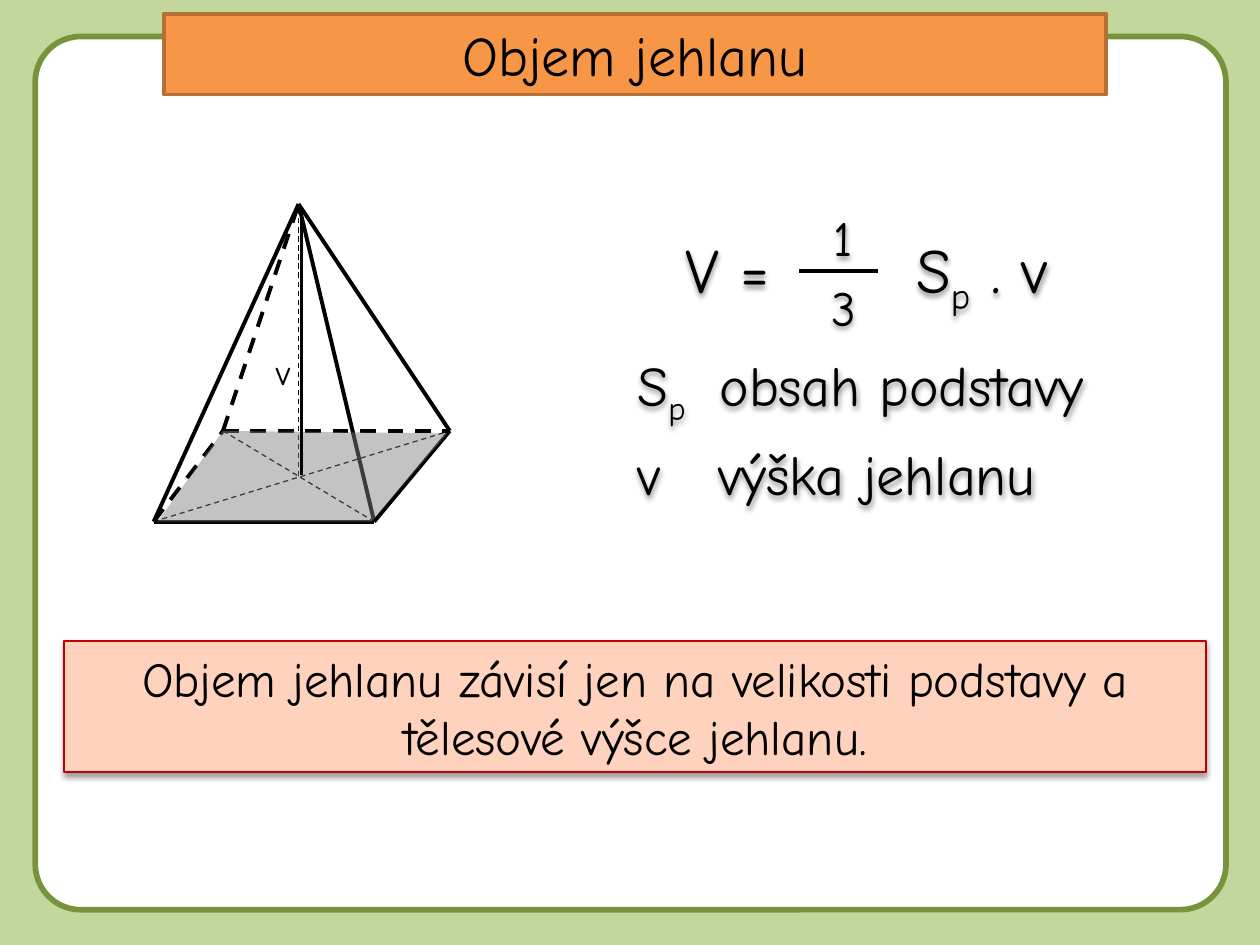
"""Build a slide on the volume of a pyramid."""
from lxml import etree
from pptx import Presentation
from pptx.dml.color import RGBColor
from pptx.enum.dml import MSO_LINE_DASH_STYLE as Dash
from pptx.enum.shapes import MSO_CONNECTOR as Connector, MSO_SHAPE as Preset
from pptx.enum.text import MSO_ANCHOR as Anchor, MSO_AUTO_SIZE as AutoSize, PP_ALIGN as Align
from pptx.oxml.ns import qn
from pptx.util import Inches, Pt

FONT = "Comic Neue"
BLACK = "000000"
color = RGBColor.from_string


def draw_line(shapes, start, end, width, dashed=False):
    """Add a black straight line between two points in inches."""
    connector = shapes.add_connector(Connector.STRAIGHT, *map(Inches, start + end))
    connector.line.color.rgb = color(BLACK)
    connector.line.width = Pt(width)
    if dashed:
        connector.line.dash_style = Dash.DASH
    etree.SubElement(connector.element.spPr, qn("a:effectLst"))


def add_shadow(shape, opacity):
    """Give a shape a soft shadow straight below it."""
    shape.shadow.inherit = False
    effects = shape.element.spPr.find(qn("a:effectLst"))
    outer = etree.SubElement(effects, qn("a:outerShdw"), blurRad=str(Pt(3.1)),
                             dist=str(Pt(1.6)), dir="5400000", rotWithShape="0")
    shade = etree.SubElement(outer, qn("a:srgbClr"), val=BLACK)
    etree.SubElement(shade, qn("a:alpha"), val=str(opacity * 1000))


presentation = Presentation()
presentation.slide_width, presentation.slide_height = Inches(10), Inches(7.5)
slide = presentation.slides.add_slide(presentation.slide_layouts[5])
slide.background.fill.solid()
slide.background.fill.fore_color.rgb = color("C3D69B")

title = slide.shapes.title
title.left, title.top, title.width, title.height = map(Inches, (1.3, 0.11, 7.48, 0.64))
card = slide.shapes.add_shape(Preset.ROUNDED_RECTANGLE, *map(Inches, (0.28, 0.29, 9.45, 6.93)))
card.adjustments[0] = 0.052
title.element.addprevious(card.element)

pyramid = slide.shapes.add_group_shape().shapes
front_left, front_right = (1.22, 4.14), (2.97, 4.14)
back_left, back_right = (1.77, 3.42), (3.57, 3.42)
center, apex = (2.37, 3.78), (2.37, 1.62)
for start, end, width, dashed in [
    (front_left, front_right, 2.25, False),
    (back_left, back_right, 2.25, True),
    (front_left, back_left, 2.25, True),
    (front_right, back_right, 2.25, False),
    (front_left, back_right, 0.75, True),
    (back_left, front_right, 0.75, True),
    (center, apex, 0.75, True),
    (front_left, apex, 2.25, False),
    (apex, front_right, 2.25, False),
    (apex, back_right, 2.25, False),
    (back_left, apex, 2.25, True),
]:
    draw_line(pyramid, start, end, width, dashed)

builder = slide.shapes.build_freeform(Inches(1.25), Inches(4.14))
builder.add_line_segments([(Inches(x), Inches(y)) for x, y in
                           [(2.95, 4.14), (3.55, 3.44), (1.77, 3.42)]], close=True)
base = builder.convert_to_shape()
base.shadow.inherit = False
base.fill.solid()
base.fill.fore_color.rgb = color("808080")
base.line.fill.background()
base_color = base.element.spPr.find(qn("a:solidFill"))[0]
etree.SubElement(base_color, qn("a:alpha"), val="47000")

conclusion = slide.shapes.add_shape(Preset.RECTANGLE, *map(Inches, (0.51, 5.09, 9.06, 1.04)))
for shape, fill, line, width in [
    (card, "FFFFFF", "77933C", 3.25),
    (title, "F79646", "B76F34", 2),
    (conclusion, "FFD2BD", "C00000", 1),
]:
    shape.fill.solid()
    shape.fill.fore_color.rgb = color(fill)
    shape.line.color.rgb = color(line)
    shape.line.width = Pt(width)
    shape.shadow.inherit = False
add_shadow(conclusion, 38)

for shape, text, size in [
    (title, "Objem jehlanu", 32),
    (conclusion, "Objem jehlanu závisí jen na velikosti podstavy a tělesové výšce jehlanu.", 28),
]:
    frame = shape.text_frame
    frame.text = text
    frame.word_wrap = True
    frame.auto_size = AutoSize.NONE
    frame.vertical_anchor = Anchor.MIDDLE
    frame.paragraphs[0].alignment = Align.CENTER
    font = frame.paragraphs[0].runs[0].font
    font.name, font.size, font.color.rgb = FONT, Pt(size), color(BLACK)

formula = slide.shapes.add_group_shape().shapes
for shapes, box, parts, size, indent, tab in [
    (slide.shapes, (4.61, 3.44, 4.09, 0.64), ["v\tvýška jehlanu"], 32, 0.45, 0.64),
    (slide.shapes, (4.76, 2.73, 4.17, 0.64), ["S", "p", "\tobsah podstavy"], 32, 0.3, 0.65),
    (slide.shapes, (2.09, 2.73, 0.39, 0.44), ["v"], 20, 0.1, None),
    (formula, (4.84, 1.78, 4.09, 0.71), ["V =\tS", "p", " . v"], 36, 0.6, 1.83),
    (formula, (6.42, 1.6, 0.55, 0.57), ["1"], 28, 0.1, None),
    (formula, (6.42, 2.15, 0.55, 0.57), ["3"], 28, 0.1, None),
]:
    text_box = shapes.add_textbox(*map(Inches, box))
    frame = text_box.text_frame
    frame.word_wrap = True
    frame.margin_left = Inches(indent)
    paragraph = frame.paragraphs[0]
    if size == 28:
        paragraph.alignment = Align.CENTER
    if size > 20:
        add_shadow(text_box, 43)
    if tab:
        tabs = etree.SubElement(paragraph._p.get_or_add_pPr(), qn("a:tabLst"))
        etree.SubElement(tabs, qn("a:tab"), pos=str(Inches(tab)), algn="l")
    for part in parts:
        run = paragraph.add_run()
        run.text = part
        run.font.name, run.font.size, run.font.color.rgb = FONT, Pt(size), color(BLACK)
        if part == "p":
            run.font._element.set("baseline", "-25000")

draw_line(formula, (6.34, 2.15), (6.97, 2.15), 2)
draw_line(slide.shapes, (2.39, 3.77), (2.39, 1.64), 1.75)
presentation.save("out.pptx")
